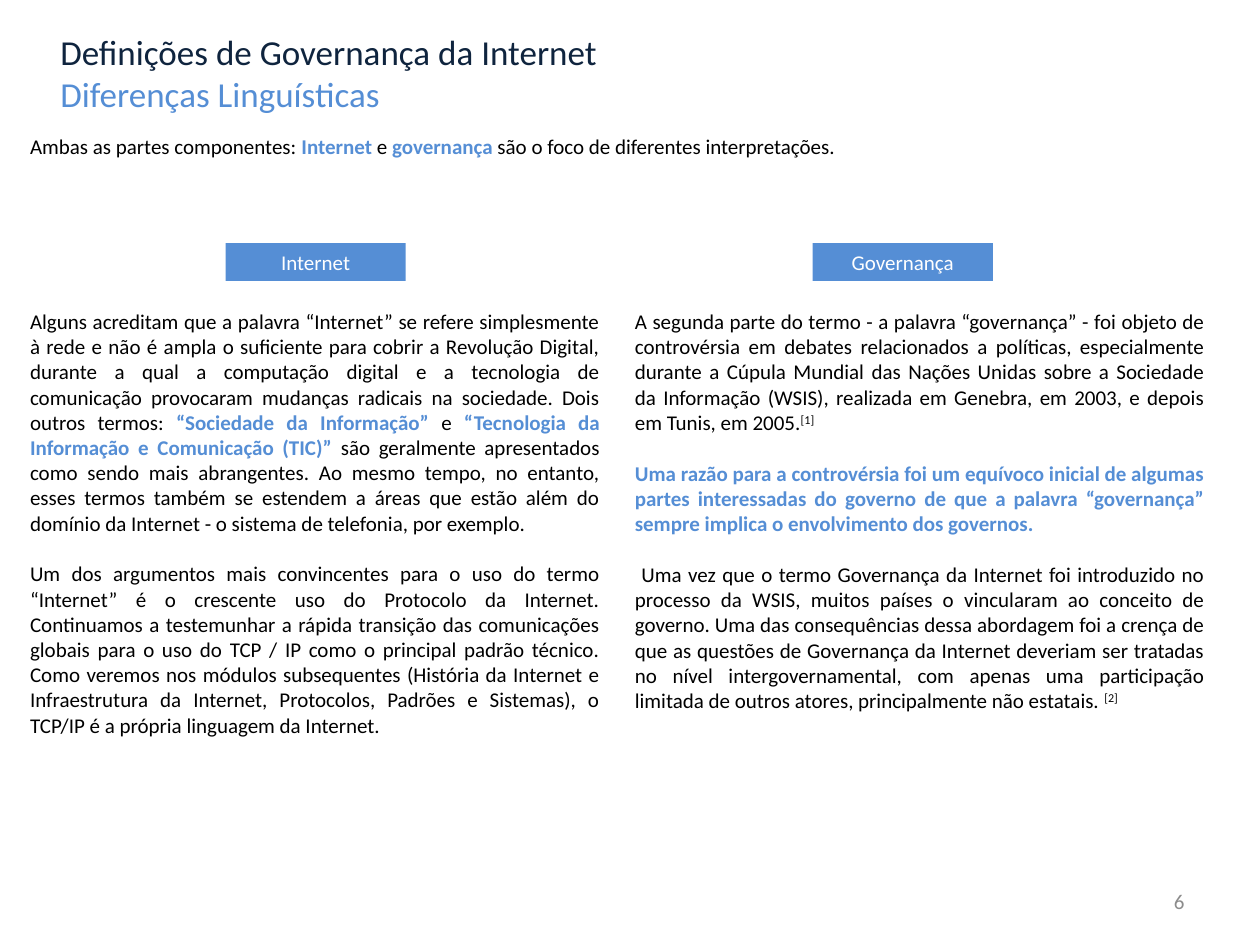
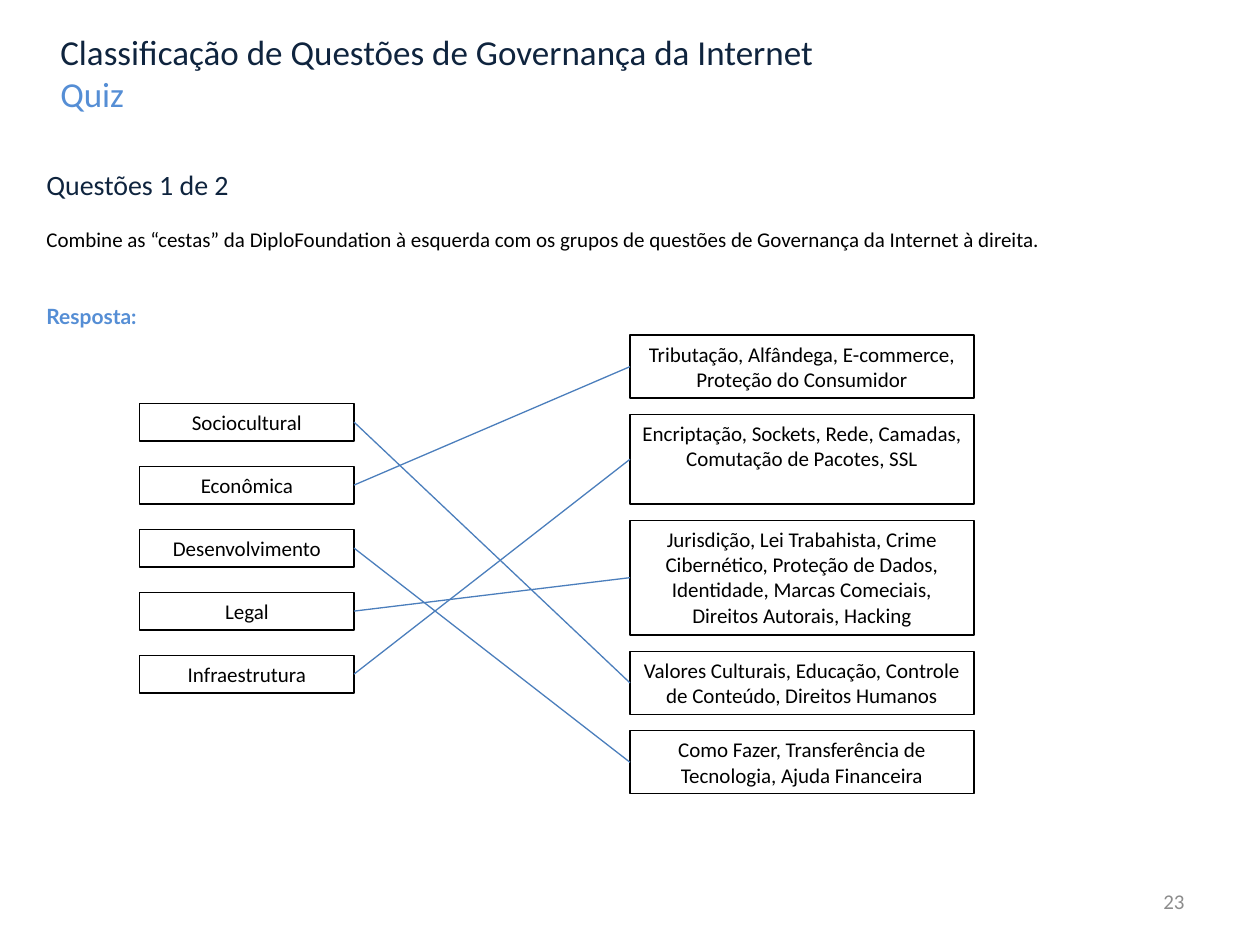
import pptx
import pptx.util
import pptx.dml.color
import pptx.enum.shapes
import pptx.enum.text
import pptx.oxml.ns
import lxml.etree

Inches = pptx.util.Inches
Pt = pptx.util.Pt
RGBColor = pptx.dml.color.RGBColor
ALIGN = pptx.enum.text.PP_ALIGN
ANCHOR = pptx.enum.text.MSO_ANCHOR
RECT = pptx.enum.shapes.MSO_SHAPE.RECTANGLE
STRAIGHT = pptx.enum.shapes.MSO_CONNECTOR.STRAIGHT

NAVY = RGBColor(0x0F, 0x24, 0x3E)
BLUE = RGBColor(0x55, 0x8E, 0xD5)
LINK = RGBColor(0x4B, 0x7E, 0xBC)
GRAY = RGBColor(0x8C, 0x8C, 0x8C)
BLACK = RGBColor(0, 0, 0)
WHITE = RGBColor(255, 255, 255)

# Run formats
BODY = {"name": "Calibri", "size": Pt(12), "bold": False, "color": BLACK}
STRONG = {**BODY, "bold": True, "color": BLUE}
NOTE = {**BODY, "baseline": "30000"}
TITLE = {**BODY, "size": Pt(20), "color": NAVY}
SUBTITLE = {**TITLE, "color": BLUE}
HEADING = {**BODY, "size": Pt(16), "color": NAVY}
ANSWER = {**STRONG, "name": "Lato"}
LABEL = {**BODY, "color": WHITE}
NUMBER = {**BODY, "color": GRAY}
LINE_GAP = 14.65  # height of one 12 pt line


def write(sp, paragraphs, align=ALIGN.LEFT, gaps=(), anchor=ANCHOR.TOP):
    """Fill a shape with paragraphs, each a list of (text, format) runs."""
    tf = sp.text_frame
    tf.word_wrap = True
    tf.vertical_anchor = anchor
    for i, runs in enumerate(paragraphs):
        p = tf.paragraphs[0] if i == 0 else tf.add_paragraph()
        p.alignment = align
        if i and gaps:
            p.space_before = Pt(gaps[i - 1])
        for text, fmt in runs:
            r = p.add_run()
            r.text = text
            for key, value in fmt.items():
                if key == "color":
                    r.font.color.rgb = value
                elif key == "baseline":
                    r._r.get_or_add_rPr().set(key, value)
                else:
                    setattr(r.font, key, value)


def add_box(s, x, y, w, h, text, fmt, fill=None, line=None):
    """Add a rectangle with one centred label."""
    sp = s.shapes.add_shape(RECT, Inches(x), Inches(y), Inches(w), Inches(h))
    sp.shadow.inherit = False
    if fill is None:
        sp.fill.background()
    else:
        sp.fill.solid()
        sp.fill.fore_color.rgb = fill
    if line is None:
        sp.line.fill.background()
    else:
        sp.line.color.rgb = line
        sp.line.width = Pt(0.75)
    write(sp, [[(text, fmt)]], ALIGN.CENTER)
    return sp


prs = pptx.Presentation()
prs.slide_width, prs.slide_height = Inches(10), Inches(7.5)

# Titles and slide numbers
slides = []
for title, subtitle, number in [
    ("Definições de Governança da Internet", "Diferenças Linguísticas", "6"),
    ("Classificação de Questões de Governança da Internet", "Quiz", "23"),
]:
    s = prs.slides.add_slide(prs.slide_layouts[6])
    sp = s.shapes.add_textbox(Inches(0.38), Inches(0.19), Inches(9.12), Inches(0.78))
    write(sp, [[(title, TITLE)], [(subtitle, SUBTITLE)]])
    sp = s.shapes.add_textbox(Inches(7.17), Inches(6.95), Inches(2.33), Inches(0.4))
    write(sp, [[(number, NUMBER)]], ALIGN.RIGHT, anchor=ANCHOR.MIDDLE)
    slides.append(s)
definitions, quiz = slides

# Definitions: introduction
sp = definitions.shapes.add_textbox(Inches(0.14), Inches(1.01), Inches(7.03), Inches(0.5))
write(sp, [[
    ("Ambas as partes componentes: ", BODY),
    ("Internet", STRONG),
    (" e ", BODY),
    ("governança", STRONG),
    (" são o foco de diferentes interpretações.", BODY),
]])

# Definitions: two labelled columns
internet = [
    [
        ("Alguns acreditam que a palavra “Internet” se refere simplesmente à rede e não é "
         "ampla o suficiente para cobrir a Revolução Digital, durante a qual a computação "
         "digital e a tecnologia de comunicação provocaram mudanças radicais na sociedade. "
         "Dois outros termos: ", BODY),
        ("“Sociedade da Informação” ", STRONG),
        ("e ", BODY),
        ("“Tecnologia da Informação e Comunicação (TIC)”", STRONG),
        (" são geralmente apresentados como sendo mais abrangentes. Ao mesmo tempo, no "
         "entanto, esses termos também se estendem a áreas que estão além do domínio da "
         "Internet - o sistema de telefonia, por exemplo.", BODY),
    ],
    [
        ("Um dos argumentos mais convincentes para o uso do termo “Internet” é o crescente "
         "uso do Protocolo da Internet. Continuamos a testemunhar a rápida transição das "
         "comunicações globais para o uso do TCP / IP como o principal padrão técnico. Como "
         "veremos nos módulos subsequentes (História da Internet e Infraestrutura da "
         "Internet, Protocolos, Padrões e Sistemas), o TCP/IP é a própria linguagem da "
         "Internet.", BODY),
    ],
]
governance = [
    [
        ("A segunda parte do termo - a palavra “governança” - foi objeto de controvérsia em "
         "debates relacionados a políticas, especialmente durante a Cúpula Mundial das "
         "Nações Unidas sobre a Sociedade da Informação (WSIS), realizada em Genebra, em "
         "2003, e depois em Tunis, em 2005.", BODY),
        ("[1]", NOTE),
    ],
    [
        ("Uma razão para a controvérsia foi um equívoco inicial de algumas partes "
         "interessadas do governo de que a palavra “governança” sempre implica o "
         "envolvimento dos governos.", STRONG),
    ],
    [
        (" Uma vez que o termo Governança da Internet foi introduzido no processo da WSIS, "
         "muitos países o vincularam ao conceito de governo. Uma das consequências dessa "
         "abordagem foi a crença de que as questões de Governança da Internet deveriam ser "
         "tratadas no nível intergovernamental, com apenas uma participação limitada de "
         "outros atores, principalmente não estatais. ", BODY),
        ("[2]", NOTE),
    ],
]
for label, label_x, text_x, h, paragraphs in [
    ("Internet", 1.79, 0.14, 3.53, internet),
    ("Governança", 6.45, 4.94, 3.33, governance),
]:
    add_box(definitions, label_x, 1.93, 1.43, 0.3, label, LABEL, fill=BLUE)
    sp = definitions.shapes.add_textbox(Inches(text_x), Inches(2.4), Inches(4.72), Inches(h))
    write(sp, paragraphs, ALIGN.JUSTIFY, [LINE_GAP] * 2)

# Quiz: question and answer heading
sp = quiz.shapes.add_textbox(Inches(0.27), Inches(1.28), Inches(9.12), Inches(1.78))
write(sp, [
    [("Questões 1 de 2", HEADING)],
    [("Combine as “cestas” da DiploFoundation à esquerda com os grupos de questões de "
      "Governança da Internet à direita.", BODY)],
    [("Resposta:", ANSWER)],
], gaps=[LINE_GAP, 2 * LINE_GAP])

# Quiz: baskets on the left
baskets = {}
for i, name in enumerate(["Sociocultural", "Econômica", "Desenvolvimento", "Legal",
                          "Infraestrutura"]):
    baskets[name] = add_box(quiz, 1.11, 3.2 + 0.5 * i, 1.7, 0.3, name, BODY, line=BLACK)

# Quiz: issue groups on the right, each linked to its basket
y = 2.66
for basket, h, issues in [
    ("Econômica", 0.5, "Tributação, Alfândega, E-commerce, Proteção do Consumidor"),
    ("Infraestrutura", 0.71, "Encriptação, Sockets, Rede, Camadas, Comutação de Pacotes, SSL"),
    ("Legal", 0.91, "Jurisdição, Lei Trabahista, Crime Cibernético, Proteção de Dados, "
                    "Identidade, Marcas Comeciais, Direitos Autorais, Hacking"),
    ("Sociocultural", 0.5, "Valores Culturais, Educação, Controle de Conteúdo, "
                           "Direitos Humanos"),
    ("Desenvolvimento", 0.5, "Como Fazer, Transferência de Tecnologia, Ajuda Financeira"),
]:
    group = add_box(quiz, 5, y, 2.73, h, issues, BODY, line=BLACK)
    y += h + 0.13
    c = quiz.shapes.add_connector(STRAIGHT, 0, 0, 0, 0)
    c.begin_connect(baskets[basket], 3)
    c.end_connect(group, 1)
    c.line.color.rgb = LINK
    c.line.width = Pt(0.75)
    lxml.etree.SubElement(c._element.spPr, pptx.oxml.ns.qn("a:effectLst"))

prs.save("out.pptx")
